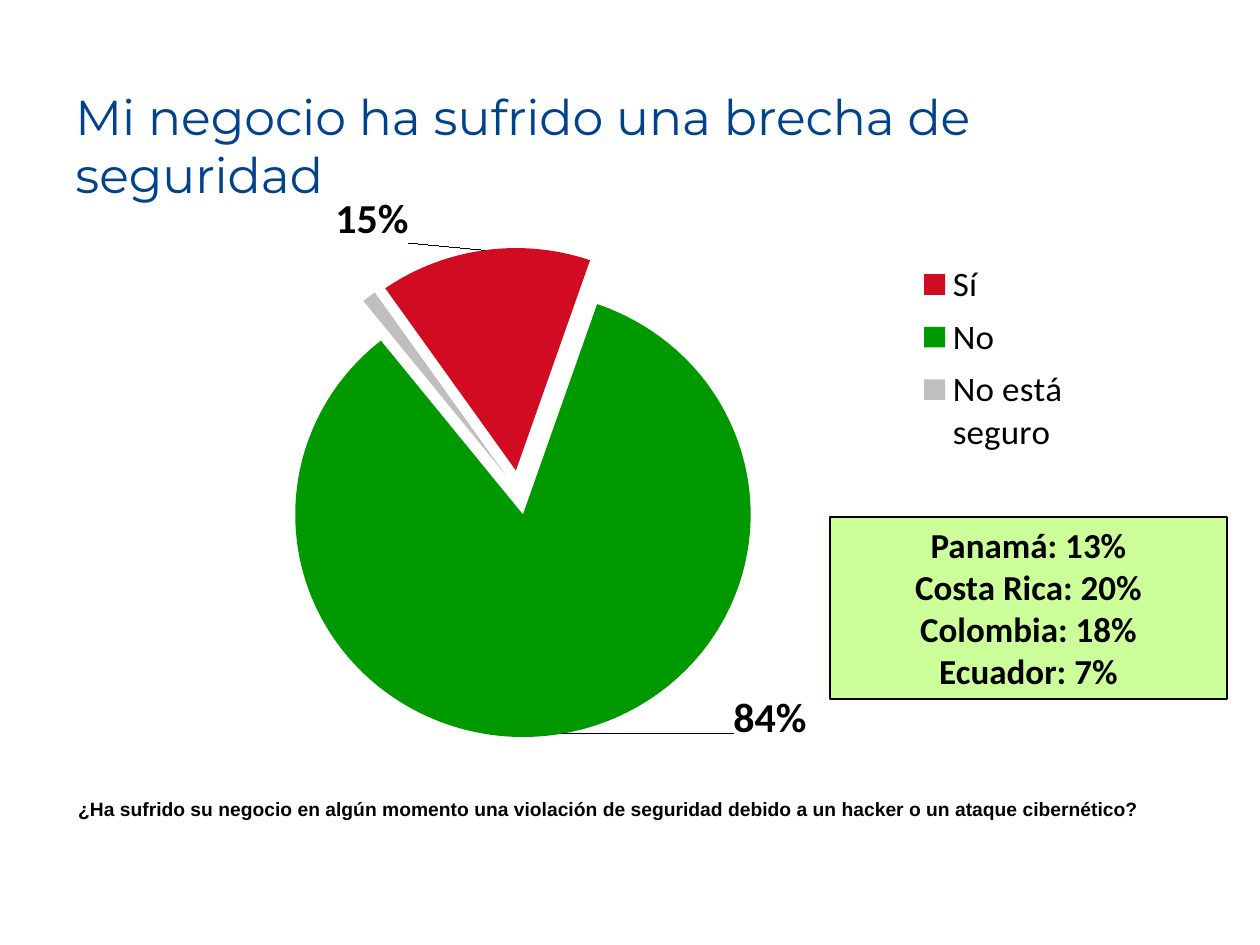
from lxml.etree import SubElement
from pptx import Presentation
from pptx.chart.data import CategoryChartData as ChartData
from pptx.dml.color import RGBColor
from pptx.enum.chart import XL_CHART_TYPE as ChartType
from pptx.enum.chart import XL_LABEL_POSITION as LabelPosition
from pptx.enum.chart import XL_LEGEND_POSITION as LegendPosition
from pptx.enum.shapes import MSO_SHAPE as Shape
from pptx.enum.text import MSO_ANCHOR as Anchor
from pptx.enum.text import PP_ALIGN as Align
from pptx.oxml import parse_xml
from pptx.oxml.ns import nsdecls, qn
from pptx.util import Pt

EMU_PER_PX = 914400 / 126


def px(*lengths):
    return [round(length * EMU_PER_PX) for length in lengths]


def color(hex_string):
    return RGBColor.from_string(hex_string)


presentation = Presentation()
presentation.slide_width, presentation.slide_height = px(1260, 945)
slide = presentation.slides.add_slide(presentation.slide_layouts[6])

data = ChartData(number_format="0%")
data.categories = ["Sí", "No", "No está seguro"]
data.add_series("Series 1", [0.15, 0.84, 0.01])
chart = slide.shapes.add_chart(ChartType.PIE, *px(194, 193, 1066, 598), data).chart
chart.has_title = False
chart.font.name = "Calibri"
chart.font.size = Pt(18)
chart.font.color.rgb = color("000000")
chart.has_legend = True
chart.legend.position = LegendPosition.RIGHT
chart.legend.include_in_layout = False
chart.legend.font.size = Pt(20)

pie = chart.plots[0]
pie.vary_by_categories = True
series = pie.series[0]
for index, fill in enumerate(["D10B21", "009900", "BFBFBF"]):
    point_fill = series.points[index].format.fill
    point_fill.solid()
    point_fill.fore_color.rgb = color(fill)

labels = series.data_labels
labels.show_value = True
labels.number_format = "0%"
labels.number_format_is_linked = False
labels.position = LabelPosition.OUTSIDE_END
for index in range(3):
    label = series.points[index].data_label
    label.font.size = Pt(24)
    label.font.bold = True
    label.position = LabelPosition.OUTSIDE_END

series_xml = chart._chartSpace.find(".//" + qn("c:ser"))
series_xml.find(qn("c:dPt")).addprevious(
    parse_xml(f'<c:explosion {nsdecls("c")} val="10"/>')
)
SubElement(series_xml.getparent(), qn("c:firstSliceAng")).set("val", "325")
yes_label, no_label, unsure_label = series_xml.iter(qn("c:dLbl"))
for child in list(unsure_label)[1:]:
    unsure_label.remove(child)
SubElement(unsure_label, qn("c:delete")).set("val", "1")

plot_area = chart._chartSpace.find(".//" + qn("c:plotArea"))
for layout in plot_area.findall(qn("c:layout")):
    plot_area.remove(layout)
legend_xml = chart._chartSpace.find(".//" + qn("c:legend"))
for layout in legend_xml.findall(qn("c:layout")):
    legend_xml.remove(layout)
edge_modes = {"xMode": "edge", "yMode": "edge"}
layouts = [
    (plot_area, 0, {"layoutTarget": "inner", **edge_modes, "x": 0.07, "y": 0.06, "w": 0.47, "h": 0.9}),
    (legend_xml, 1, {**edge_modes, "x": 0.67, "y": 0.1, "w": 0.16, "h": 0.36}),
    (yes_label, 1, {"x": -0.07, "y": 0}),
    (no_label, 1, {"x": 0.16, "y": -0.08}),
]
for parent, position, values in layouts:
    layout = parse_xml(f'<c:layout {nsdecls("c")}><c:manualLayout/></c:layout>')
    for name, value in values.items():
        SubElement(layout[0], qn(f"c:{name}")).set("val", str(value))
    parent.insert(position, layout)

question = slide.shapes.add_textbox(*px(47, 791, 1124, 37))
title = slide.shapes.add_textbox(*px(63, 38, 924, 157))
countries = slide.shapes.add_shape(Shape.RECTANGLE, *px(830, 517, 397, 182))
countries.shadow.inherit = False
countries.fill.solid()
countries.fill.fore_color.rgb = color("CCFF99")
countries.line.color.rgb = color("000000")
countries.line.width = Pt(0.75)

texts = [
    (question, ["¿Ha sufrido su negocio en algún momento una violación de seguridad debido a un hacker o un ataque cibernético?"],
     Align.CENTER, "000000", {"name": "Arial", "size": Pt(11), "bold": True}),
    (title, ["Mi negocio ha sufrido una brecha de seguridad"],
     Align.LEFT, "00438C", {"name": "Montserrat", "size": Pt(28), "bold": False}),
    (countries, ["Panamá: 13%", "Costa Rica: 20%", "Colombia: 18%", "Ecuador: 7%"],
     Align.CENTER, "000000", {"name": "Calibri", "size": Pt(20), "bold": True}),
]
for shape, lines, alignment, text_color, font_format in texts:
    frame = shape.text_frame
    frame.word_wrap = True
    frame.vertical_anchor = Anchor.TOP
    frame.text = "\n".join(lines)
    for paragraph in frame.paragraphs:
        paragraph.alignment = alignment
        paragraph.font.color.rgb = color(text_color)
        for attribute, value in font_format.items():
            setattr(paragraph.font, attribute, value)
title.text_frame.margin_top = px(48)[0]

presentation.save("out.pptx")
